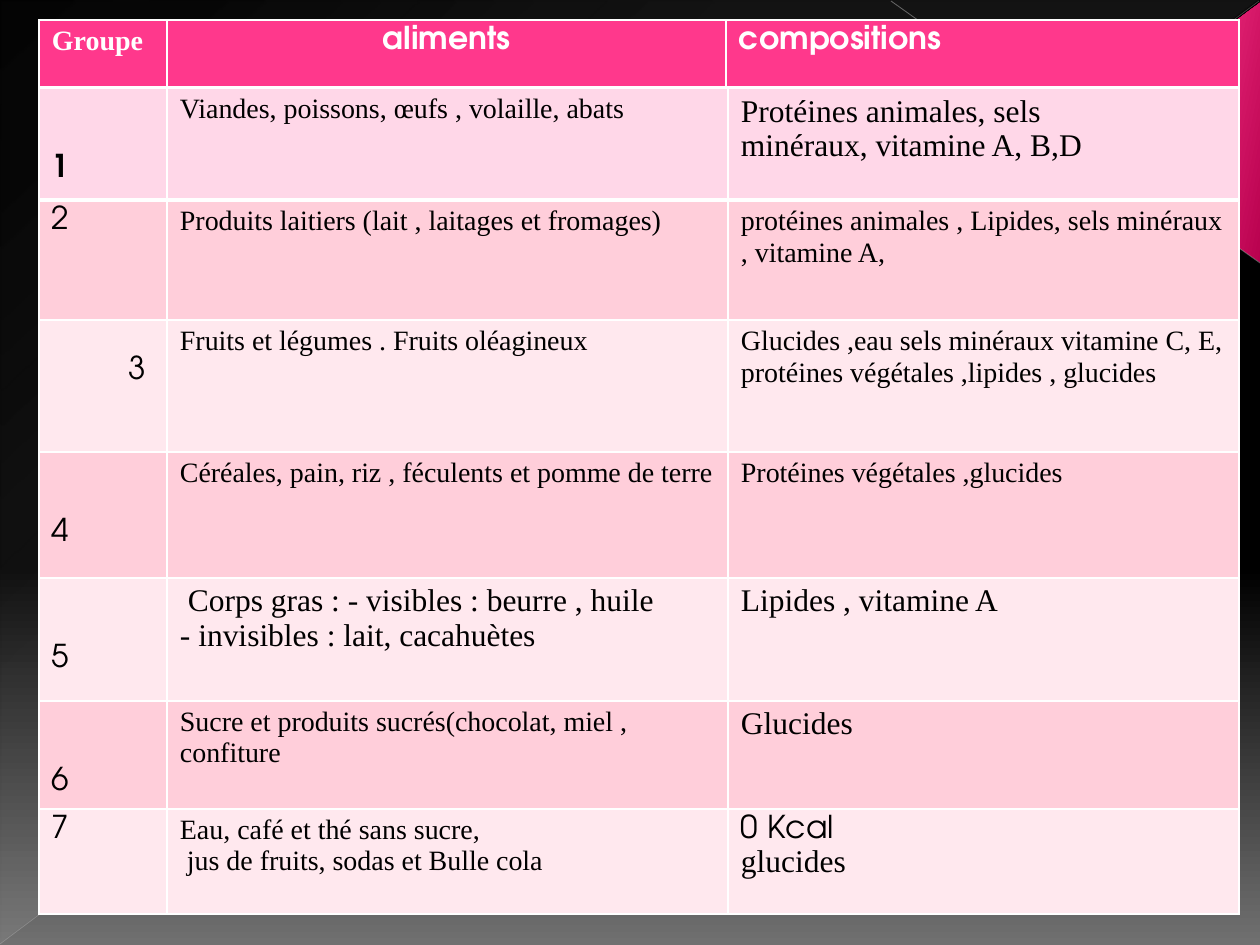
from dataclasses import dataclass

from lxml import etree
from pptx import Presentation
from pptx.dml.color import RGBColor
from pptx.enum.shapes import MSO_CONNECTOR as LINE, MSO_SHAPE as SHAPE
from pptx.enum.text import PP_ALIGN as ALIGN
from pptx.oxml.ns import qn
from pptx.util import Pt

PX = 914400 / 126  # EMU per px


@dataclass(frozen=True)
class Theme:
    display: str = "TeX Gyre Adventor"
    serif: str = "Times New Roman"
    small: int = 16
    large: int = 18
    white: str = "FFFFFF"
    black: str = "000000"
    header: str = "FF388C"
    first: str = "FFD7E8"
    dark_band: str = "FFCEDA"
    light_band: str = "FFE8EE"
    shine_line: str = "C6C6C6"
    diagonal_line: str = "BFBFBF"


T = Theme()


@dataclass(frozen=True)
class Stop:
    pos: int
    color: str
    alpha: int = 100


@dataclass(frozen=True)
class Cell:
    lines: tuple[str, ...]
    size: int = T.small
    fonts: tuple[str, ...] = (T.serif,)
    bold: bool = False
    color: str = T.black
    align: ALIGN = ALIGN.LEFT
    left: int = 13
    top: int = 6


@dataclass(frozen=True)
class Row:
    height: int
    fill: str
    cells: tuple[Cell, ...]
    bottom: int = 1


def emu(px: float) -> int:
    return round(px * PX)


def number(text: str, top: int = 6, left: int = 13, bold: bool = False) -> Cell:
    return Cell((text,), T.large, (T.display,), bold, left=left, top=top)


def small(*lines: str) -> Cell:
    return Cell(lines)


def large(*lines: str) -> Cell:
    return Cell(lines, T.large)


def heading(text: str, size: int, font: str, align: ALIGN = ALIGN.LEFT) -> Cell:
    return Cell((text,), size, (font,), True, T.white, align)


def add_color(parent, color: str, alpha: int = 100) -> None:
    clr = etree.SubElement(parent, qn("a:srgbClr"), val=color)
    if alpha < 100:
        etree.SubElement(clr, qn("a:alpha"), val=str(alpha * 1000))


def set_gradient(props, stops: tuple[Stop, ...], angle: int) -> None:
    """Swap the solid fill in props for a gradient."""
    grad = etree.Element(qn("a:gradFill"), rotWithShape="1")
    gs_list = etree.SubElement(grad, qn("a:gsLst"))
    for stop in stops:
        gs = etree.SubElement(gs_list, qn("a:gs"), pos=str(stop.pos * 1000))
        add_color(gs, stop.color, stop.alpha)
    etree.SubElement(grad, qn("a:lin"), ang=str(angle * 60000), scaled="0")
    props.replace(props.find(qn("a:solidFill")), grad)


def add_triangle(s, kind: SHAPE, box: tuple[int, int, int, int],
                 stops: tuple[Stop, ...], angle: int):
    sp = s.shapes.add_shape(kind, *map(emu, box))
    sp.shadow.inherit = False
    sp.line.fill.background()
    sp.fill.solid()
    set_gradient(sp._element.spPr, stops, angle)
    sp._element.spPr.find(qn("a:xfrm")).set("flipV", "1")
    return sp


def add_line(s, ends: tuple[int, int, int, int], color: str,
             width: float, alpha: int) -> None:
    ln = s.shapes.add_connector(LINE.STRAIGHT, *map(emu, ends))
    ln.line.width = Pt(width)
    ln.line.color.rgb = RGBColor.from_string(color)
    clr = ln._element.spPr.find(".//" + qn("a:srgbClr"))
    etree.SubElement(clr, qn("a:alpha"), val=str(alpha * 1000))
    etree.SubElement(ln._element.spPr, qn("a:effectLst"))


def set_borders(cell, bottom: int) -> None:
    tc_pr = cell._tc.get_or_add_tcPr()
    widths = {"a:lnL": 1, "a:lnR": 1, "a:lnT": 1, "a:lnB": bottom}
    for i, (tag, width) in enumerate(widths.items()):
        ln = etree.Element(qn(tag), w=str(Pt(width)))
        add_color(etree.SubElement(ln, qn("a:solidFill")), T.white)
        tc_pr.insert(i, ln)


def fill_cell(cell, data: Cell, row: Row) -> None:
    cell.fill.solid()
    cell.fill.fore_color.rgb = RGBColor.from_string(row.fill)
    cell.margin_left, cell.margin_top = emu(data.left), emu(data.top)
    set_borders(cell, row.bottom)
    tf = cell.text_frame
    for i, text in enumerate(data.lines):
        p = tf.add_paragraph() if i else tf.paragraphs[0]
        p.alignment = data.align
        r = p.add_run()
        r.text = text
        r.font.name = data.fonts[i % len(data.fonts)]
        r.font.size = Pt(data.size)
        r.font.bold = data.bold
        r.font.color.rgb = RGBColor.from_string(data.color)


def add_grid(s, top: int, widths: tuple[int, ...], rows: tuple[Row, ...]) -> None:
    height = sum(row.height for row in rows)
    table = s.shapes.add_table(len(rows), len(widths), emu(39), emu(top),
                               emu(sum(widths)), emu(height)).table
    table.first_row = table.horz_banding = False
    for col, width in zip(table.columns, widths):
        col.width = emu(width)
    for i, row in enumerate(rows):
        table.rows[i].height = emu(row.height)
        for j, data in enumerate(row.cells):
            fill_cell(table.cell(i, j), data, row)


HEADER = Row(68, T.header, (
    heading("Groupe", T.small, T.serif),
    heading("aliments", T.large, T.display, ALIGN.CENTER),
    heading("compositions", T.large, T.display)), bottom=3)

LOW = 66  # top margin of the numbers set low in their cell
GROUPS = (
    Row(112, T.first, (number("1", LOW, bold=True),
        small("Viandes, poissons, œufs , volaille, abats"),
        large("Protéines animales, sels", "minéraux, vitamine A, B,D")), bottom=3),
    Row(120, T.dark_band, (number("2"),
        small("Produits laitiers (lait , laitages et fromages)"),
        small("protéines animales , Lipides, sels minéraux , vitamine A,"))),
    Row(132, T.light_band, (number("3", 36, left=90),
        small("Fruits et légumes . Fruits oléagineux"),
        small("Glucides ,eau sels minéraux vitamine C, E, "
              "protéines végétales ,lipides , glucides"))),
    Row(126, T.dark_band, (number("4", LOW),
        small("Céréales, pain, riz , féculents et pomme de terre"),
        small("Protéines végétales ,glucides"))),
    Row(123, T.light_band, (number("5", LOW),
        large(" Corps gras : - visibles : beurre , huile",
              "- invisibles : lait, cacahuètes"),
        large("Lipides , vitamine A"))),
    Row(108, T.dark_band, (number("6", LOW),
        small("Sucre et produits sucrés(chocolat, miel , confiture"),
        large("Glucides"))),
    Row(105, T.light_band, (number("7"),
        small("Eau, café et thé sans sucre,", " jus de fruits, sodas et Bulle cola"),
        Cell(("0 Kcal", "glucides"), T.large, (T.display, T.serif)))),
)


def main() -> None:
    prs = Presentation()
    prs.slide_width, prs.slide_height = emu(1260), emu(945)
    s = prs.slides.add_slide(prs.slide_layouts[6])

    # Background
    s.background.fill.solid()
    set_gradient(s._element.cSld.find(qn("p:bg")).find(qn("p:bgPr")),
                 (Stop(0, "000000"), Stop(60, "000000"), Stop(100, "707070")), 90)

    # Corner decoration
    add_triangle(s, SHAPE.RIGHT_TRIANGLE, (1, 1, 1258, 943),
                 (Stop(0, "D2D2D2", 10), Stop(70, "D2D2D2", 8), Stop(100, "D2D2D2", 1)), 133)
    pink = add_triangle(s, SHAPE.ISOSCELES_TRIANGLE, (1041, 43, 261, 179),
                        (Stop(0, "B8014E"), Stop(60, "FF388C"), Stop(100, "FF9CB9")), 258)
    pink.rotation = 90
    pink.adjustments[0] = 0.51
    add_line(s, (1260, 263, 891, 1), T.shine_line, 0.47, 45)
    add_line(s, (0, 944, 1259, 1), T.diagonal_line, 0.39, 35)

    # Food group tables
    add_grid(s, 20, (128, 559, 513), (HEADER,))
    add_grid(s, 88, (128, 561, 511), GROUPS)

    prs.save("out.pptx")


if __name__ == "__main__":
    main()
